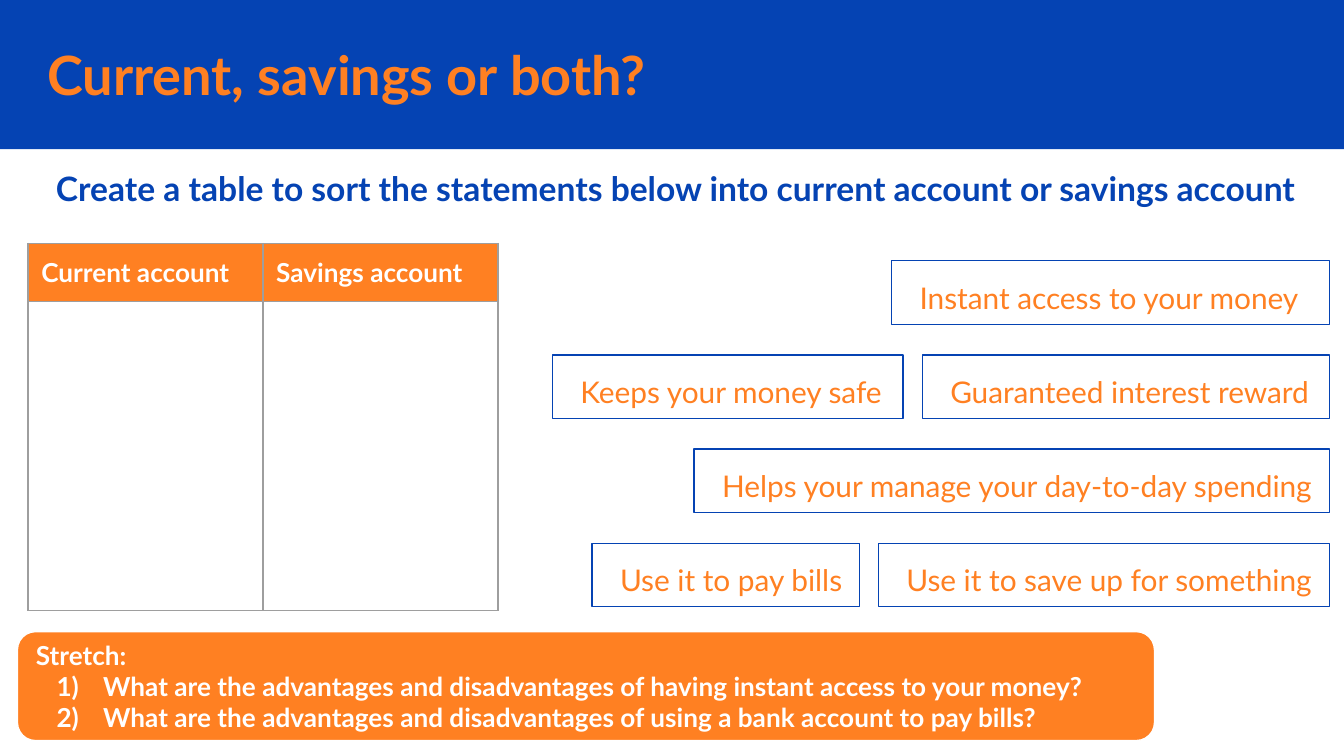
from dataclasses import dataclass

from lxml import etree
from pptx import Presentation
from pptx import util as u
from pptx.dml.color import RGBColor
from pptx.enum import shapes, text
from pptx.oxml import ns

BLUE = RGBColor(0x05, 0x43, 0xB3)
ORANGE = RGBColor(0xFF, 0x80, 0x22)
WHITE = RGBColor(0xFF, 0xFF, 0xFF)
GREY = RGBColor(0x9E, 0x9E, 0x9E)
FONT = "Lato"
INSET = u.Cm(0.25)
INDENT = u.Cm(0.28)
RIGHT_EDGE, BOX_GAP, BOX_HEIGHT = 25.13, 0.36, 1.2
FIRST_ROW_TOP, ROW_PITCH = 4.93, 1.78


@dataclass
class Statement:
    words: str
    width: float


STATEMENT_ROWS = [
    [Statement("Instant access to your money", 8.28)],
    [Statement("Keeps your money safe", 6.63), Statement("Guaranteed interest reward", 7.7)],
    [Statement("Helps your manage your day-to-day spending", 12.01)],
    [Statement("Use it to pay bills", 5.05), Statement("Use it to save up for something", 8.53)],
]
HEADINGS = ["Current account", "Savings account"]
QUESTIONS = [
    "What are the advantages and disadvantages of having instant access to your money?",
    "What are the advantages and disadvantages of using a bank account to pay bills?",
]


def apply(target, values: dict) -> None:
    for name, value in values.items():
        setattr(target, name, value)


def write(para, words: str, size: float, color: RGBColor, bold: bool = False) -> None:
    span = para.add_run()
    span.text = words
    apply(span.font, {"name": FONT, "size": u.Pt(size), "bold": bold})
    span.font.color.rgb = color


def set_frame(frame, anchor) -> None:
    apply(frame, {
        "word_wrap": True, "auto_size": text.MSO_AUTO_SIZE.NONE, "vertical_anchor": anchor,
        "margin_left": INSET, "margin_right": INSET, "margin_top": INSET, "margin_bottom": INSET,
    })


def indent(para, left: int, first: int = 0):
    properties = para._p.get_or_add_pPr()
    properties.set("marL", str(left))
    properties.set("indent", str(first))
    return properties


def add_box(page, kind, left: float, top: float, width: float, height: float, fill=None, line=None):
    box = page.shapes.add_shape(kind, u.Cm(left), u.Cm(top), u.Cm(width), u.Cm(height))
    box.shadow.inherit = False
    if fill is None:
        box.fill.background()
    else:
        box.fill.solid()
        box.fill.fore_color.rgb = fill
    if line is None:
        box.line.fill.background()
    else:
        box.line.color.rgb = line
        box.line.width = u.Pt(0.75)
    return box


def add_title(page) -> None:
    title = page.shapes.title
    apply(title, {"left": u.Cm(0.64), "top": u.Cm(0.69), "width": u.Cm(21.49), "height": u.Cm(1.42)})
    set_frame(title.text_frame, text.MSO_ANCHOR.MIDDLE)
    para = title.text_frame.paragraphs[0]
    para.alignment = text.PP_ALIGN.LEFT
    write(para, "Current, savings or both?", 29, ORANGE, True)
    band = add_box(page, shapes.MSO_SHAPE.RECTANGLE, 0, 0, 25.4, 2.82, BLUE)
    title.element.addprevious(band.element)


def add_instruction(page) -> None:
    box = page.shapes.add_textbox(u.Cm(0.13), u.Cm(2.82), u.Cm(25), u.Cm(1.27))
    set_frame(box.text_frame, text.MSO_ANCHOR.TOP)
    para = box.text_frame.paragraphs[0]
    apply(para, {"alignment": text.PP_ALIGN.CENTER, "line_spacing": 1.15})
    indent(para, INDENT)
    write(para, "Create a table to sort the statements below into current account or savings account",
          18, BLUE, True)


def add_statement(page, statement: Statement, left: float, top: float) -> None:
    box = add_box(page, shapes.MSO_SHAPE.RECTANGLE, left, top, statement.width, BOX_HEIGHT, line=BLUE)
    set_frame(box.text_frame, text.MSO_ANCHOR.TOP)
    para = box.text_frame.paragraphs[0]
    apply(para, {"alignment": text.PP_ALIGN.LEFT, "line_spacing": 1.15})
    indent(para, INDENT)
    write(para, statement.words, 16, ORANGE)


def add_statements(page) -> None:
    """Stack the rows of statements, each row flush with the right edge."""
    for index, row in enumerate(STATEMENT_ROWS):
        right = RIGHT_EDGE
        for statement in reversed(row):
            left = right - statement.width
            add_statement(page, statement, left, FIRST_ROW_TOP + index * ROW_PITCH)
            right = left - BOX_GAP


def add_borders(cell) -> None:
    properties = cell._tc.get_or_add_tcPr()
    for side in ("a:lnL", "a:lnR", "a:lnT", "a:lnB"):
        line = etree.SubElement(properties, ns.qn(side), w=str(u.Pt(0.75)))
        fill = etree.SubElement(line, ns.qn("a:solidFill"))
        etree.SubElement(fill, ns.qn("a:srgbClr"), val=str(GREY))


def add_sorting_table(page) -> None:
    table = page.shapes.add_table(2, 2, u.Cm(0.53), u.Cm(4.6), u.Cm(8.88), u.Cm(6.94)).table
    apply(table, {"first_row": False, "horz_banding": False})
    for column in table.columns:
        column.width = u.Cm(4.44)
    for row, height in zip(table.rows, (1.1, 5.84)):
        row.height = u.Cm(height)
    for cell in table.iter_cells():
        add_borders(cell)
        cell.fill.background()
    for column, heading in enumerate(HEADINGS):
        cell = table.cell(0, column)
        cell.fill.solid()
        cell.fill.fore_color.rgb = ORANGE
        apply(cell, {"margin_left": INSET, "margin_right": INSET,
                     "margin_top": INSET, "margin_bottom": INSET})
        write(cell.text_frame.paragraphs[0], heading, 14, WHITE, True)


def add_stretch(page) -> None:
    box = add_box(page, shapes.MSO_SHAPE.ROUNDED_RECTANGLE, 0.33, 11.94, 21.49, 2.06, ORANGE, WHITE)
    frame = box.text_frame
    set_frame(frame, text.MSO_ANCHOR.MIDDLE)
    heading = frame.paragraphs[0]
    heading.alignment = text.PP_ALIGN.LEFT
    write(heading, "Stretch:", 14, WHITE, True)
    for question in QUESTIONS:
        para = frame.add_paragraph()
        para.alignment = text.PP_ALIGN.LEFT
        properties = indent(para, u.Cm(1.27), u.Cm(-0.88))
        color = etree.SubElement(properties, ns.qn("a:buClr"))
        etree.SubElement(color, ns.qn("a:srgbClr"), val=str(WHITE))
        etree.SubElement(properties, ns.qn("a:buAutoNum"), type="arabicParenR")
        write(para, question, 14, WHITE, True)


def main() -> None:
    deck = Presentation()
    apply(deck, {"slide_width": u.Cm(25.4), "slide_height": u.Cm(14.29)})
    page = deck.slides.add_slide(deck.slide_layouts.get_by_name("Title Only"))
    add_title(page)
    add_instruction(page)
    add_statements(page)
    add_sorting_table(page)
    add_stretch(page)
    deck.save("out.pptx")


if __name__ == "__main__":
    main()
